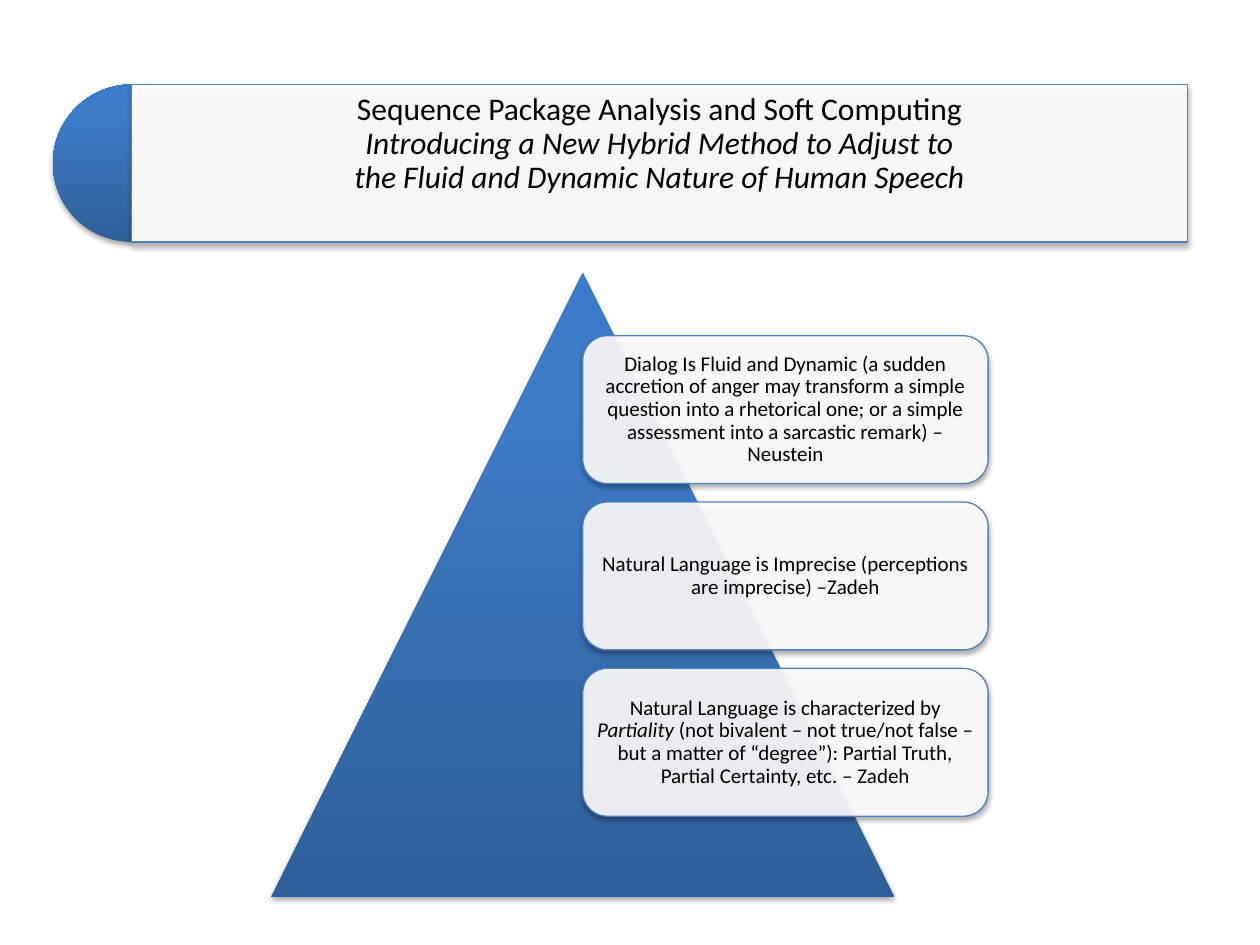
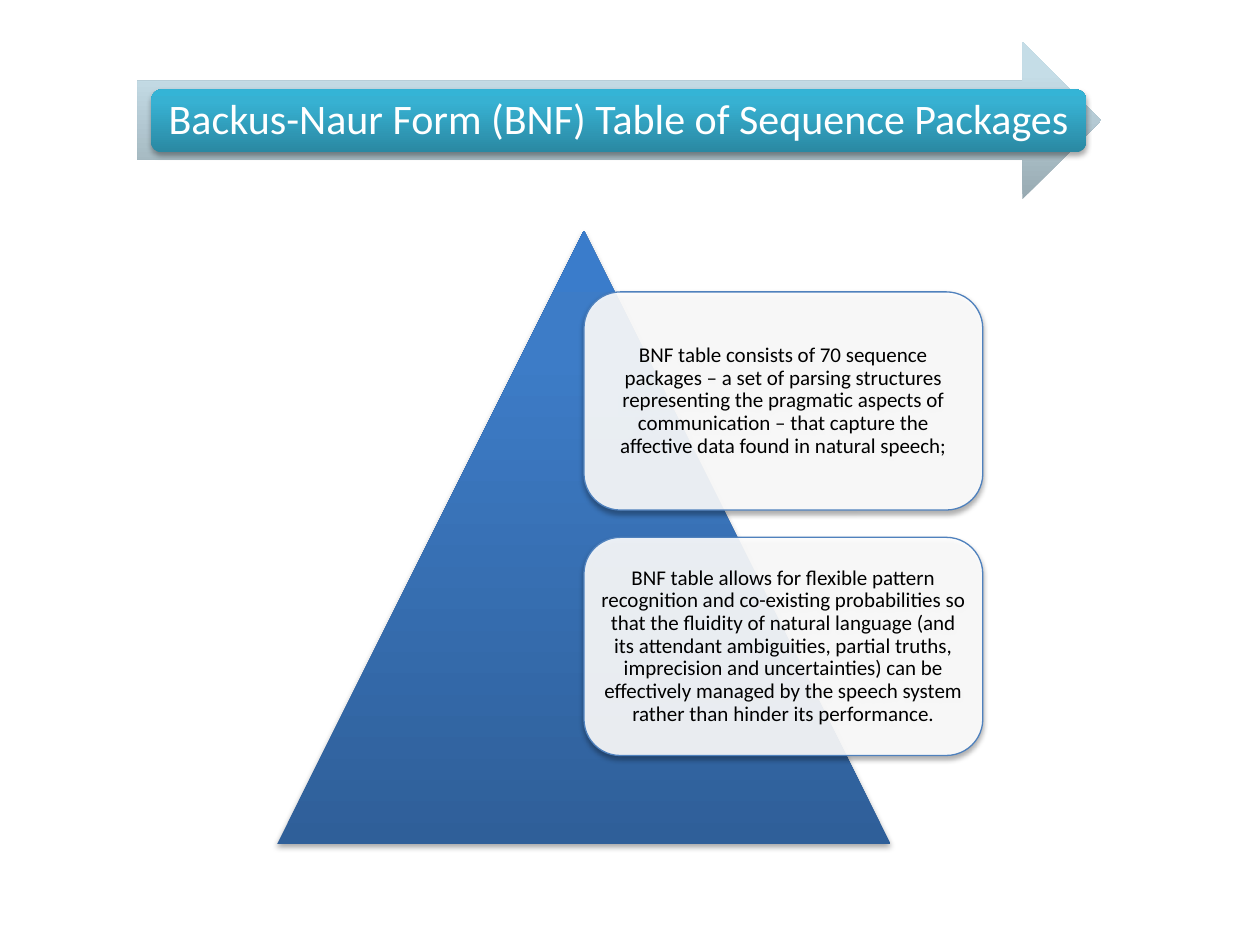
from dataclasses import dataclass

from lxml.etree import SubElement
from pptx import Presentation
from pptx.dml.color import RGBColor
from pptx.enum.shapes import MSO_SHAPE
from pptx.enum.text import MSO_ANCHOR, PP_ALIGN
from pptx.oxml import parse_xml
from pptx.oxml.ns import nsdecls, qn
from pptx.util import Inches, Pt


@dataclass(frozen=True)
class Theme:
    font: str = "Calibri"
    ink: str = "000000"
    paper: str = "FFFFFF"
    outline: str = "4F81BD"
    blue: tuple = ("2F5F99", "3D7CC7", "3A7CCB")
    pale: tuple = ("98AAB2", "C5DDE7", "C6DEE9")
    teal: tuple = ("2A88A2", "37B1D2", "34B4D6")
    title_size: int = 18
    headline_size: int = 24
    body_size: int = 12
    panel_opacity: int = 90
    shadow_opacity: int = 35


THEME = Theme()

METHOD_TITLE = [
    [("Sequence Package Analysis and Soft Computing", False)],
    [("Introducing a New Hybrid Method to Adjust to", True)],
    [("the Fluid and Dynamic Nature of Human Speech", True)],
]
METHOD_POINTS = [
    [[("Dialog Is Fluid and Dynamic (a sudden accretion of anger may transform "
       "a simple question into a rhetorical one; or a simple assessment into a "
       "sarcastic remark) –Neustein", False)]],
    [[("Natural Language is Imprecise (perceptions are imprecise) –Zadeh", False)]],
    [[("Natural Language is characterized by ", False),
      ("Partiality", True),
      (" (not bivalent – not true/not false – but a matter of “degree”): "
       "Partial Truth, Partial Certainty, etc. – Zadeh", False)]],
]
TABLE_TITLE = [[("Backus-Naur Form (BNF) Table of Sequence Packages", False)]]
TABLE_POINTS = [
    [[("BNF table consists of 70 sequence packages – a set of parsing structures "
       "representing the pragmatic aspects of communication – that capture the "
       "affective data found in natural speech;", False)]],
    [[("BNF table allows for flexible pattern recognition and co-existing "
       "probabilities so that the fluidity of natural language (and its attendant "
       "ambiguities, partial truths, imprecision and uncertainties) can be "
       "effectively managed by the speech system rather than hinder its "
       "performance.", False)]],
]


def add_alpha(color, percent):
    SubElement(color, qn("a:alpha"), val=str(percent * 1000))


def add_box(page, kind, left, top, width, height, shadow=True):
    box = page.shapes.add_shape(
        kind, Inches(left), Inches(top), Inches(width), Inches(height))
    box.shadow.inherit = False
    if shadow:
        effects = box._element.spPr.find(qn("a:effectLst"))
        outer = SubElement(
            effects, qn("a:outerShdw"), blurRad=str(Pt(3.1)), dist=str(Pt(1.8)),
            dir="5400000", rotWithShape="0")
        add_alpha(SubElement(outer, qn("a:srgbClr"), val=THEME.ink),
                  THEME.shadow_opacity)
    return box


def add_gradient_box(page, kind, left, top, width, height, colors, shadow=True):
    box = add_box(page, kind, left, top, width, height, shadow)
    box.line.fill.background()
    stops = "".join(
        f'<a:gs pos="{position * 1000}"><a:srgbClr val="{color}"/></a:gs>'
        for position, color in zip((0, 80, 100), colors))
    gradient = parse_xml(
        f'<a:gradFill {nsdecls("a")} rotWithShape="1"><a:gsLst>{stops}</a:gsLst>'
        '<a:lin ang="16200000" scaled="0"/></a:gradFill>')
    box._element.spPr.find(qn("a:prstGeom")).addnext(gradient)
    return box


def add_panel(page, kind, left, top, width, height):
    box = add_box(page, kind, left, top, width, height)
    box.fill.solid()
    box.fill.fore_color.rgb = RGBColor.from_string(THEME.paper)
    add_alpha(box._element.spPr.find(qn("a:solidFill"))[0], THEME.panel_opacity)
    box.line.color.rgb = RGBColor.from_string(THEME.outline)
    box.line.width = Pt(0.75)
    return box


def write_text(box, lines, size=THEME.body_size, color=THEME.ink,
               margin=0.05, bottom=None):
    frame = box.text_frame
    frame.word_wrap = True
    frame.vertical_anchor = MSO_ANCHOR.MIDDLE
    frame.margin_left = frame.margin_right = frame.margin_top = Inches(margin)
    frame.margin_bottom = Inches(margin if bottom is None else bottom)
    para = frame.paragraphs[0]
    para.alignment = PP_ALIGN.CENTER
    para.line_spacing = 0.9
    for index, line in enumerate(lines):
        if index:
            para.add_line_break()
        for text, italic in line:
            span = para.add_run()
            span.text = text
            span.font.name = THEME.font
            span.font.size = Pt(size)
            span.font.italic = italic
            span.font.color.rgb = RGBColor.from_string(color)


def add_pyramid(page, left, top, side, points):
    add_gradient_box(page, MSO_SHAPE.ISOSCELES_TRIANGLE, left, top, side, side,
                     THEME.blue)
    step = 0.8 * side / len(points)
    for index, lines in enumerate(points):
        panel = add_panel(
            page, MSO_SHAPE.ROUNDED_RECTANGLE, left + side / 2,
            top + 0.1 * side + index * step, 0.65 * side, step * 8 / 9)
        write_text(panel, lines)


def build_method_page(page):
    left, top, height = 0.42, 0.67, 1.25
    cap = add_gradient_box(page, MSO_SHAPE.PIE, left, top, height, height,
                           THEME.blue)
    cap.adjustments[0], cap.adjustments[1] = 54, 162
    banner = add_panel(page, MSO_SHAPE.RECTANGLE, left + height / 2, top, 8.38,
                       height)
    write_text(banner, METHOD_TITLE, size=THEME.title_size, margin=0.07, bottom=0.37)
    add_pyramid(page, 2.15, 2.17, 4.95, METHOD_POINTS)


def build_table_page(page):
    add_gradient_box(page, MSO_SHAPE.RIGHT_ARROW, 1.09, 0.33, 7.65, 1.25,
                     THEME.pale, shadow=False)
    headline = add_gradient_box(page, MSO_SHAPE.ROUNDED_RECTANGLE, 1.2, 0.71,
                                7.42, 0.5, THEME.teal)
    write_text(headline, TABLE_TITLE, size=THEME.headline_size, color=THEME.paper)
    add_pyramid(page, 2.2, 1.83, 4.87, TABLE_POINTS)


def main():
    deck = Presentation()
    deck.slide_width, deck.slide_height = Inches(10), Inches(7.5)
    for build in (build_method_page, build_table_page):
        build(deck.slides.add_slide(deck.slide_layouts[6]))
    deck.save("out.pptx")


if __name__ == "__main__":
    main()
